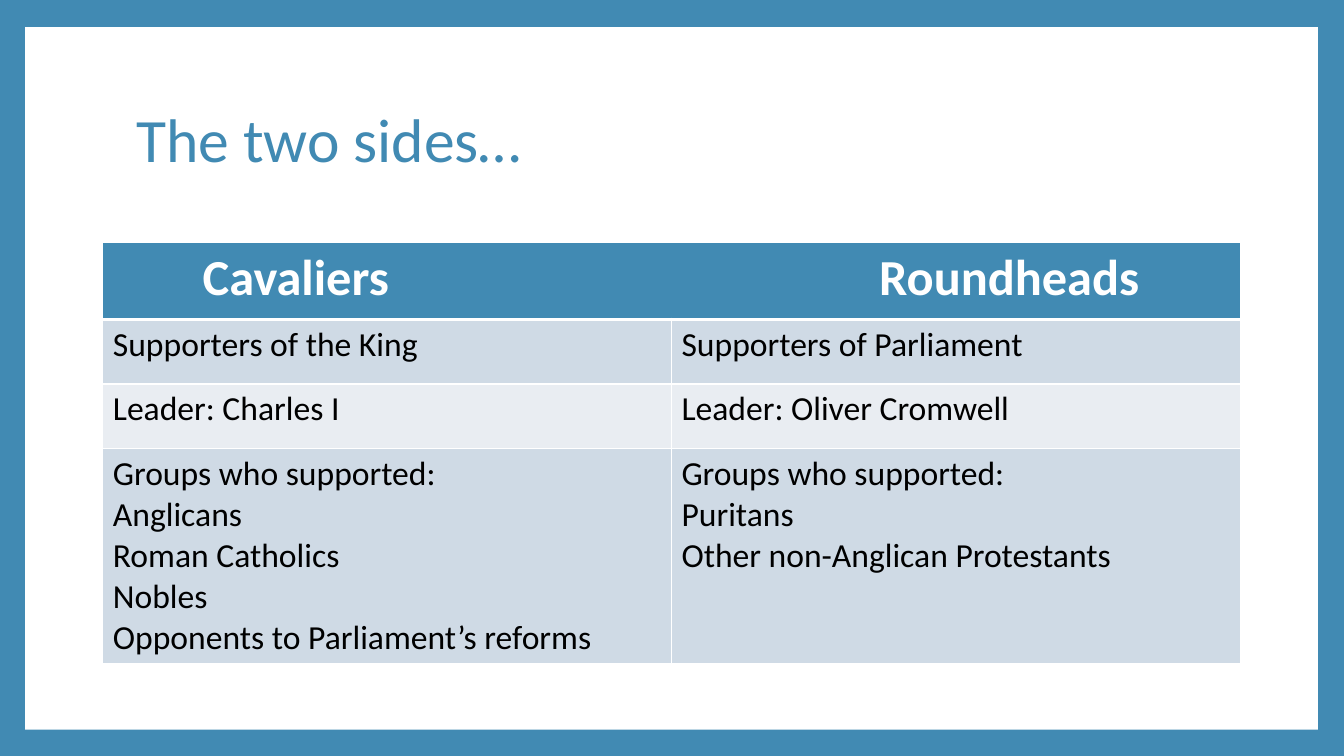
from lxml.etree import SubElement
from pptx import Presentation
from pptx.dml.color import RGBColor
from pptx.enum.shapes import MSO_SHAPE
from pptx.enum.text import MSO_ANCHOR, PP_ALIGN
from pptx.oxml import parse_xml
from pptx.oxml.ns import nsdecls, qn
from pptx.util import Inches, Pt

BLUE, WHITE, BLACK = "418AB3", "FFFFFF", "000000"
BANDS = ["CFDAE5", "E9EDF2"]
FONT = "Calibri"

ROW_HEIGHTS = [0.77, 0.64, 0.64, 2.05]
HEADER = ["Cavaliers", "Roundheads"]
HEADER_STOPS = [0.89, 7.6]
ROWS = [
    ["Supporters of the King", "Supporters of Parliament"],
    ["Leader: Charles I", "Leader: Oliver Cromwell"],
    [
        "Groups who supported:\nAnglicans\nRoman Catholics\nNobles\n"
        "Opponents to Parliament’s reforms",
        "Groups who supported:\nPuritans\nOther non-Anglican Protestants",
    ],
]


def color(hex_string):
    return RGBColor.from_string(hex_string)


def write(frame, text, size=24, ink=BLACK, bold=False, spacing=None):
    frame.text = text
    for paragraph in frame.paragraphs:
        paragraph.alignment = PP_ALIGN.LEFT
        if spacing:
            paragraph.line_spacing = spacing
        font = paragraph.runs[0].font
        font.name, font.size, font.bold = FONT, Pt(size), bold
        font.color.rgb = color(ink)


def set_tab_stops(paragraph, stops):
    properties = paragraph._p.get_or_add_pPr()
    tab_list = SubElement(properties, qn("a:tabLst"))
    for stop in stops:
        SubElement(tab_list, qn("a:tab"), pos=str(Inches(stop)), algn="l")


def style_cell(cell, fill, bottom=1, top=1):
    """Fill the cell and give it white borders, widths in points."""
    cell.fill.solid()
    cell.fill.fore_color.rgb = color(fill)
    properties = cell._tc.get_or_add_tcPr()
    widths = {"lnL": 1, "lnR": 1, "lnT": top, "lnB": bottom}
    for index, (side, width) in enumerate(widths.items()):
        properties.insert(index, parse_xml(
            f'<a:{side} {nsdecls("a")} w="{Pt(width)}"><a:solidFill>'
            f'<a:srgbClr val="{WHITE}"/></a:solidFill></a:{side}>'))


def add_panel(slide):
    panel = slide.shapes.add_shape(
        MSO_SHAPE.RECTANGLE,
        Inches(0.25), Inches(0.27), Inches(12.82), Inches(6.97))
    panel.shadow.inherit = False
    panel.fill.solid()
    panel.fill.fore_color.rgb = color(WHITE)
    panel.line.fill.background()
    slide.shapes.title.element.addprevious(panel.element)


def add_title(slide, text):
    title = slide.shapes.title
    title.left, title.top = Inches(1.25), Inches(0.67)
    title.width, title.height = Inches(10.8), Inches(1.48)
    title.text_frame.vertical_anchor = MSO_ANCHOR.MIDDLE
    write(title.text_frame, text, size=44, ink=BLUE, spacing=0.9)


def add_sides_table(slide):
    table = slide.shapes.add_table(
        len(ROW_HEIGHTS), len(HEADER),
        Inches(1.02), Inches(2.4), Inches(11.28), Inches(sum(ROW_HEIGHTS))).table
    for row, height in zip(table.rows, ROW_HEIGHTS):
        row.height = Inches(height)

    # Header: one merged cell, its two names set on tab stops
    header = table.cell(0, 0)
    header.merge(table.cell(0, 1))
    for cell in table.rows[0].cells:
        style_cell(cell, BLUE, bottom=3)
    write(header.text_frame, "".join("\t" + name for name in HEADER),
          size=36, ink=WHITE, bold=True)
    set_tab_stops(header.text_frame.paragraphs[0], HEADER_STOPS)

    # Banded body rows
    for index, texts in enumerate(ROWS):
        for column, text in enumerate(texts):
            cell = table.cell(index + 1, column)
            style_cell(cell, BANDS[index % 2], top=1 if index else 3)
            write(cell.text_frame, text)


def main():
    presentation = Presentation()
    presentation.slide_width = Inches(13.33)
    presentation.slide_height = Inches(7.5)
    slide = presentation.slides.add_slide(presentation.slide_layouts[5])
    slide.background.fill.solid()
    slide.background.fill.fore_color.rgb = color(BLUE)
    add_panel(slide)
    add_title(slide, "The two sides…")
    add_sides_table(slide)
    presentation.save("out.pptx")


if __name__ == "__main__":
    main()
